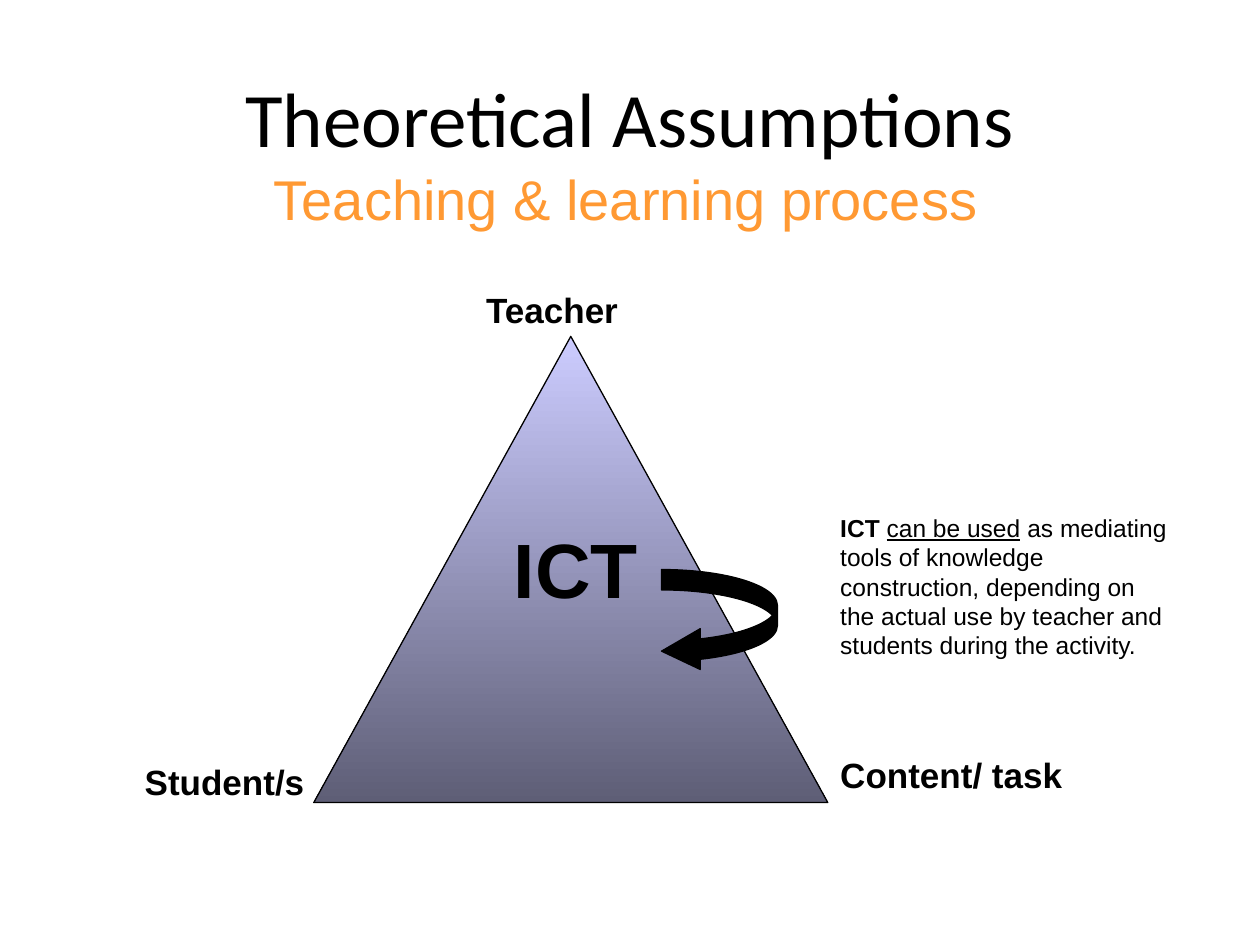
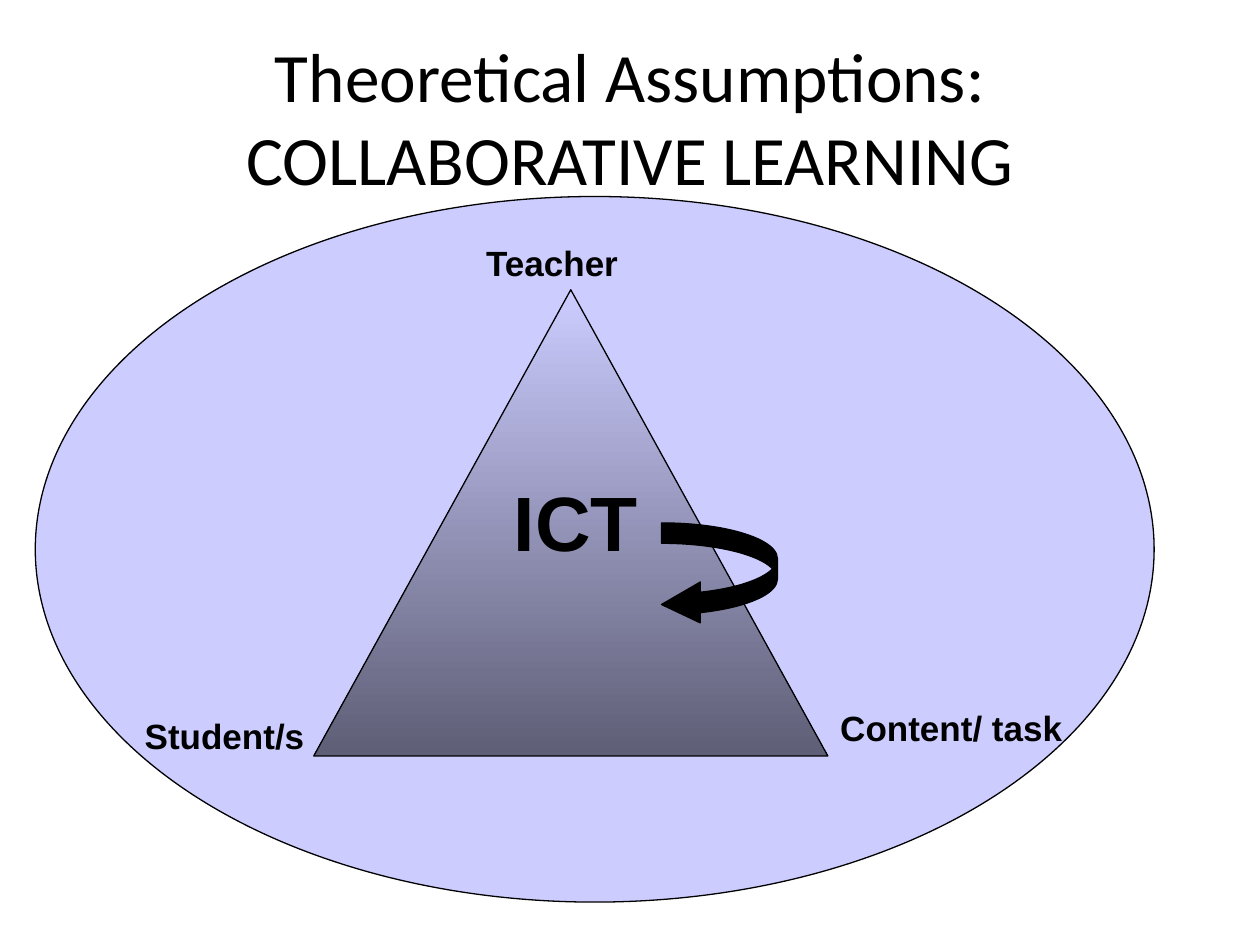
from pptx import Presentation
from pptx.dml.color import RGBColor
from pptx.enum.shapes import MSO_SHAPE
from pptx.enum.text import MSO_ANCHOR, PP_ALIGN
from pptx.util import Inches, Pt

BLACK = RGBColor(0x00, 0x00, 0x00)
LAVENDER = RGBColor(0xCC, 0xCC, 0xFF)
SLATE = RGBColor(0x5E, 0x5E, 0x76)
ORANGE = RGBColor(0xFF, 0x99, 0x33)


def write_text(para, text, font="Arial", size=20, color=BLACK, bold=False, underline=False):
    span = para.add_run()
    span.text = text
    span.font.name = font
    span.font.size = Pt(size)
    span.font.color.rgb = color
    span.font.bold = bold
    span.font.underline = underline


class SlideBuilder:
    def __init__(self):
        self.deck = Presentation()
        self.deck.slide_width = Inches(10)
        self.deck.slide_height = Inches(7.5)
        self.canvas = None

    def new_page(self):
        page = self.deck.slides.add_slide(self.deck.slide_layouts[6])
        self.canvas = page.shapes

    def start_group(self):
        self.canvas = self.canvas.add_group_shape().shapes

    def paragraph(self, place, align=PP_ALIGN.LEFT, anchor=MSO_ANCHOR.TOP):
        box = self.canvas.add_textbox(*map(Inches, place))
        box.text_frame.word_wrap = True
        box.text_frame.vertical_anchor = anchor
        para = box.text_frame.paragraphs[0]
        para.alignment = align
        return para

    def title(self, text, size=44):
        para = self.paragraph((0.5, 0.3, 9, 1.25), PP_ALIGN.CENTER, MSO_ANCHOR.MIDDLE)
        write_text(para, text, font="Calibri", size=size)

    def label(self, text, place, align=PP_ALIGN.LEFT, **style):
        write_text(self.paragraph(place, align), text, **style)

    def shape(self, kind, place, *colors, adjustments=()):
        shape = self.canvas.add_shape(kind, *map(Inches, place))
        shape.shadow.inherit = False
        shape.line.color.rgb = BLACK
        shape.line.width = Pt(0.75)
        for index, value in enumerate(adjustments):
            shape.adjustments[index] = value
        if len(colors) == 1:
            shape.fill.solid()
            shape.fill.fore_color.rgb = colors[0]
        else:
            shape.fill.gradient()
            shape.fill.gradient_angle = 270
            for stop, color in zip(shape.fill.gradient_stops, colors):
                stop.color.rgb = color

    def learning_triangle(self, top):
        self.shape(MSO_SHAPE.ISOSCELES_TRIANGLE, (2.49, top, 4.08, 3.7), LAVENDER, SLATE)
        corners = (
            ("Teacher", 3.76, -0.43, 1.75),
            ("Student/s", 1.05, 3.32, 2.16),
            ("Content/ task", 6.57, 3.26, 2.58),
        )
        for text, left, offset, width in corners:
            self.label(text, (left, top + offset, width, 0.43), bold=True)
        self.label("ICT", (3.76, top + 1.42, 1.62, 0.83), PP_ALIGN.CENTER, size=44, bold=True)
        self.shape(MSO_SHAPE.CURVED_LEFT_ARROW, (5.25, top + 1.85, 0.92, 0.81), BLACK,
                   adjustments=(0.2, 0.4, 0.38))


def build_process(builder):
    builder.new_page()
    builder.title("Theoretical Assumptions")
    builder.learning_triangle(2.67)
    para = builder.paragraph((6.57, 4.02, 2.81, 1.26))
    write_text(para, "ICT ", size=14, bold=True)
    write_text(para, "can be used", size=14, underline=True)
    write_text(para, " as mediating tools of knowledge construction, depending on the actual use "
                     "by teacher and students during the activity.", size=14)
    builder.label("Teaching & learning process ", (1.92, 1.26, 6.22, 0.63), PP_ALIGN.CENTER,
                  size=32, color=ORANGE)


def build_collaboration(builder):
    builder.new_page()
    builder.title("Theoretical Assumptions: COLLABORATIVE LEARNING", size=39.6)
    builder.start_group()
    builder.shape(MSO_SHAPE.OVAL, (0.28, 1.56, 8.88, 5.6), LAVENDER)
    builder.learning_triangle(2.3)


def main():
    builder = SlideBuilder()
    build_process(builder)
    build_collaboration(builder)
    builder.deck.save("out.pptx")


if __name__ == "__main__":
    main()
